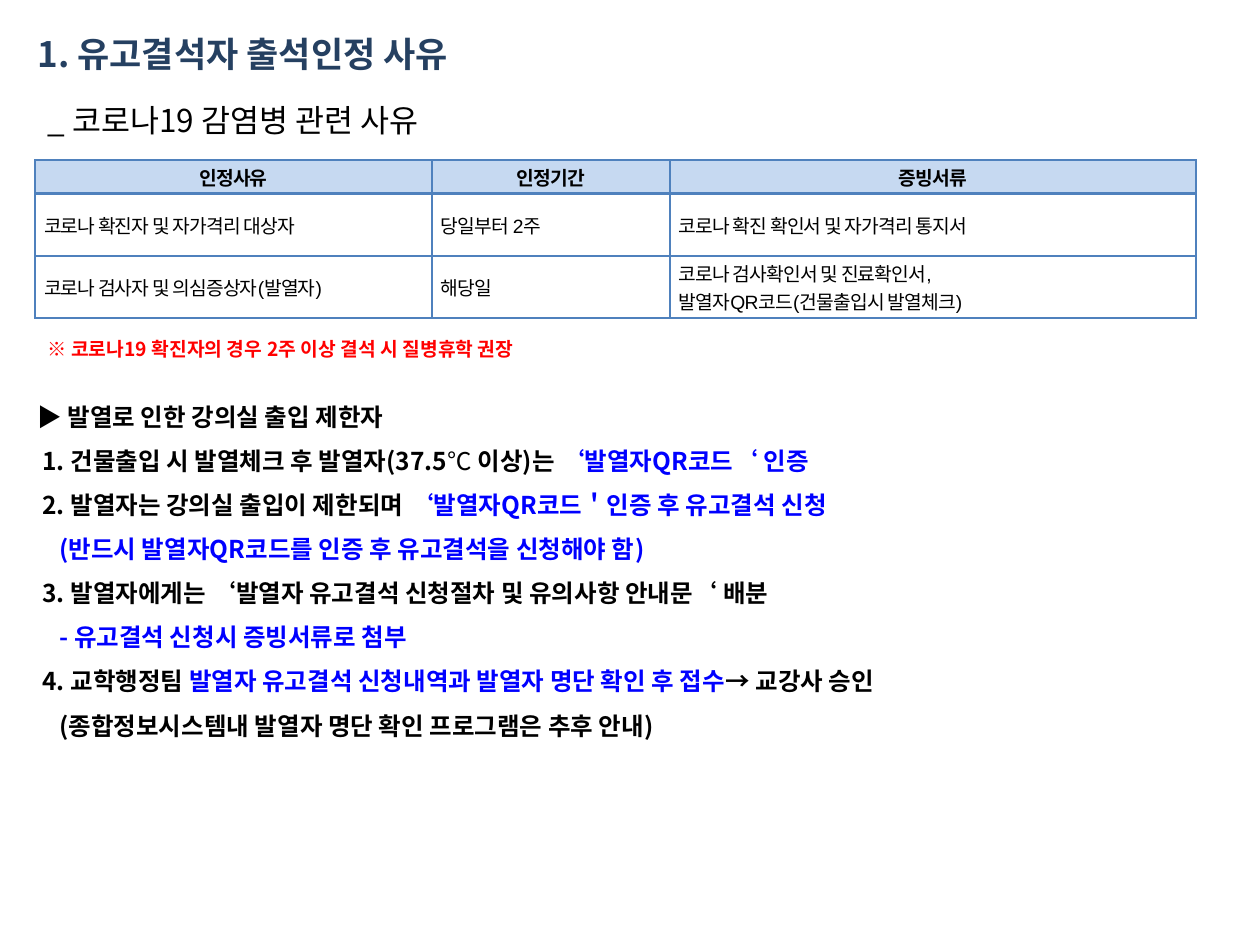
import pptx
import pptx.dml.color
import pptx.enum.text
import pptx.oxml
import pptx.oxml.ns
import pptx.util
from lxml import etree

RGB = pptx.dml.color.RGBColor
ALIGN = pptx.enum.text.PP_ALIGN
NAVY = RGB(0x25, 0x40, 0x61)
BLACK = RGB(0, 0, 0)
RED = RGB(0xFF, 0, 0)
BLUE = RGB(0, 0, 0xFF)
HEADER_FILL = RGB(0xC6, 0xD9, 0xF1)
BORDER = RGB(0x4F, 0x81, 0xBD)
KOREAN, LATIN = "Noto Sans CJK KR", "Arial"
PX = 914400 // 126

# text, box in px, size, colour, bold
HEADINGS = [
    ("1. 유고결석자 출석인정 사유", (25, 26, 481, 55), 20, NAVY, True),
    ("_ 코로나19 감염병 관련 사유", (35, 95, 437, 50), 18, BLACK, False),
    ("※ 코로나19 확진자의 경우 2주 이상 결석 시 질병휴학 권장",
     (35, 331, 544, 37), 11, RED, True),
]

REASONS = [
    ("인정사유", "인정기간", "증빙서류"),
    ("코로나 확진자 및 자가격리 대상자", "당일부터 2주", "코로나 확진 확인서 및 자가격리 통지서"),
    ("코로나 검사자 및 의심증상자(발열자)", "해당일",
     "코로나 검사확인서 및 진료확인서,\n발열자QR코드(건물출입시 발열체크)"),
]
TABLE_LEFT, TABLE_TOP = 35, 160
COLUMN_WIDTHS = (397, 238, 526)
ROW_HEIGHTS = (34, 62, 62)

STEPS_BOX = (25, 381, 1193, 363)
STEP, DETAIL = 5, 22  # indents in px
# indent, then runs of text, colour, bold
STEPS = [
    (0, [("▶ 발열로 인한 강의실 출입 제한자", BLACK, True)]),
    (STEP, [("1. 건물출입 시 발열체크 후 발열자(37.5", BLACK, True), ("℃", BLACK, False),
            (" 이상)는 ", BLACK, True), ("‘발열자QR코드‘ 인증", BLUE, True)]),
    (STEP, [("2. 발열자는 강의실 출입이 제한되며 ", BLACK, True),
            ("‘발열자QR코드＇인증 후 유고결석 신청", BLUE, True)]),
    (DETAIL, [("(반드시 발열자QR코드를 인증 후 유고결석을 신청해야 함)", BLUE, True)]),
    (STEP, [("3. 발열자에게는 ‘발열자 유고결석 신청절차 및 유의사항 안내문‘ 배분", BLACK, True)]),
    (DETAIL, [("- 유고결석 신청시 증빙서류로 첨부", BLUE, True)]),
    (STEP, [("4. 교학행정팀 ", BLACK, True),
            ("발열자 유고결석 신청내역과 발열자 명단 확인 후 접수", BLUE, True),
            ("→ 교강사 승인", BLACK, True)]),
    (DETAIL, [("(종합정보시스템내 발열자 명단 확인 프로그램은 추후 안내)", BLACK, True)]),
]


def format_run(run, size, colour, bold, latin=KOREAN):
    run.font.size = pptx.util.Pt(size)
    run.font.color.rgb = colour
    run.font.bold = bold
    run.font.name = latin
    east_asian = etree.SubElement(run.font._element, pptx.oxml.ns.qn("a:ea"))
    east_asian.set("typeface", KOREAN)


def add_text_frame(slide, box, wrap):
    frame = slide.shapes.add_textbox(*(length * PX for length in box)).text_frame
    frame.word_wrap = wrap
    frame.auto_size = pptx.enum.text.MSO_AUTO_SIZE.SHAPE_TO_FIT_TEXT
    return frame


def add_borders(cell, widths):
    """Draw the left, right, top and bottom borders, with widths in points."""
    properties = cell._tc.get_or_add_tcPr()
    for side, width in zip("LRTB", widths):
        properties.append(pptx.oxml.parse_xml(
            f'<a:ln{side} {pptx.oxml.ns.nsdecls("a")} w="{pptx.util.Pt(width)}">'
            f'<a:solidFill><a:srgbClr val="{BORDER}"/></a:solidFill></a:ln{side}>'))


def add_reason_table(slide):
    table = slide.shapes.add_table(
        len(REASONS), len(COLUMN_WIDTHS), TABLE_LEFT * PX, TABLE_TOP * PX,
        sum(COLUMN_WIDTHS) * PX, sum(ROW_HEIGHTS) * PX).table
    for column, width in zip(table.columns, COLUMN_WIDTHS):
        column.width = width * PX
    for row_index, (row, height) in enumerate(zip(table.rows, ROW_HEIGHTS)):
        row.height = height * PX
        header = row_index == 0
        for cell, text in zip(row.cells, REASONS[row_index]):
            add_borders(cell, (1, 1, 2 if row_index == 1 else 1, 2 if header else 1))
            if header:
                cell.fill.solid()
                cell.fill.fore_color.rgb = HEADER_FILL
            else:
                cell.fill.background()
            cell.margin_left = cell.margin_right = 9 * PX
            cell.margin_top = cell.margin_bottom = 2 * PX
            cell.vertical_anchor = pptx.enum.text.MSO_ANCHOR.MIDDLE
            cell.text_frame.text = text
            for paragraph in cell.text_frame.paragraphs:
                paragraph.alignment = ALIGN.CENTER if header else ALIGN.JUSTIFY
                for run in paragraph.runs:
                    format_run(run, 11, BLACK, header, KOREAN if header else LATIN)
                    run.font._element.set("spc", "-50")


def add_steps(slide):
    frame = add_text_frame(slide, STEPS_BOX, True)
    for index, (indent, runs) in enumerate(STEPS):
        paragraph = frame.add_paragraph() if index else frame.paragraphs[0]
        paragraph.line_spacing = 1.5
        paragraph._p.get_or_add_pPr().set("marL", str(indent * PX))
        for text, colour, bold in runs:
            run = paragraph.add_run()
            run.text = text
            format_run(run, 14, colour, bold)


def main():
    presentation = pptx.Presentation()
    presentation.slide_width = 1260 * PX
    presentation.slide_height = 945 * PX
    slide = presentation.slides.add_slide(presentation.slide_layouts[6])
    for text, box, size, colour, bold in HEADINGS:
        frame = add_text_frame(slide, box, False)
        frame.text = text
        format_run(frame.paragraphs[0].runs[0], size, colour, bold)
    add_reason_table(slide)
    add_steps(slide)
    presentation.save("out.pptx")


if __name__ == "__main__":
    main()
